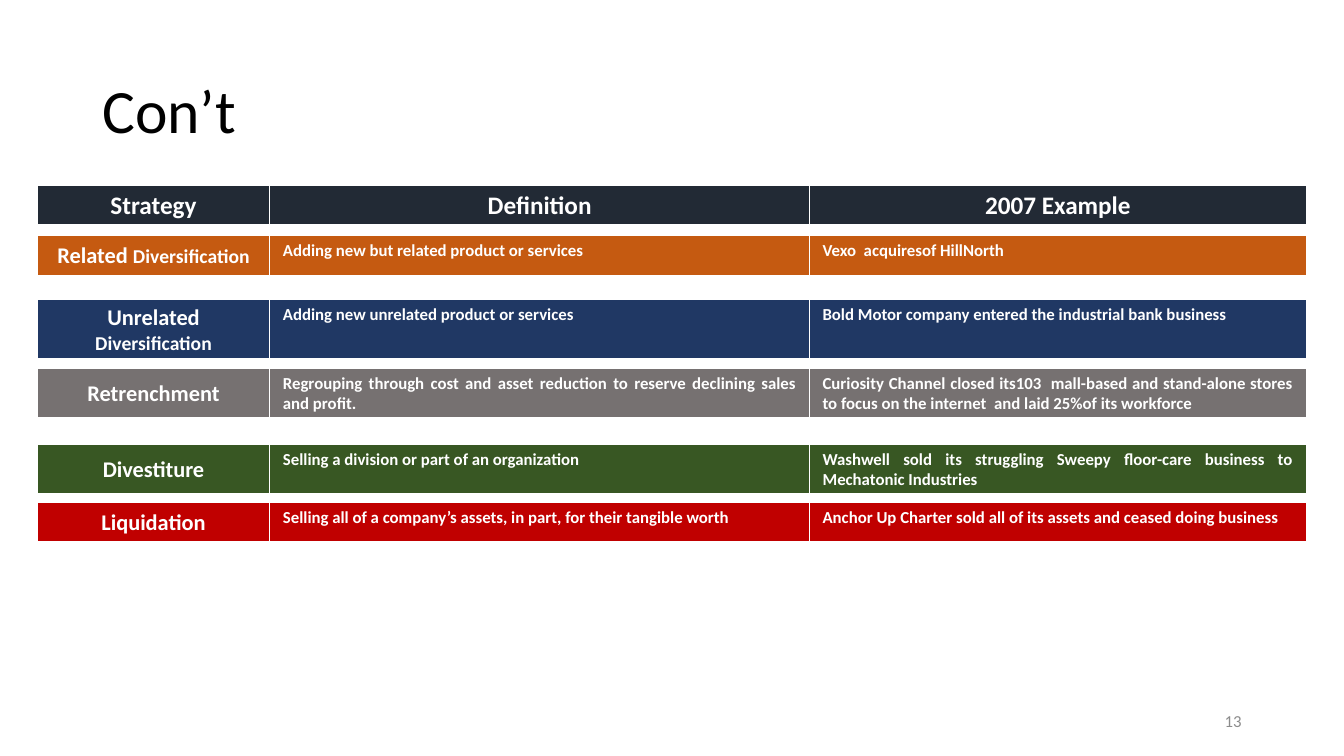
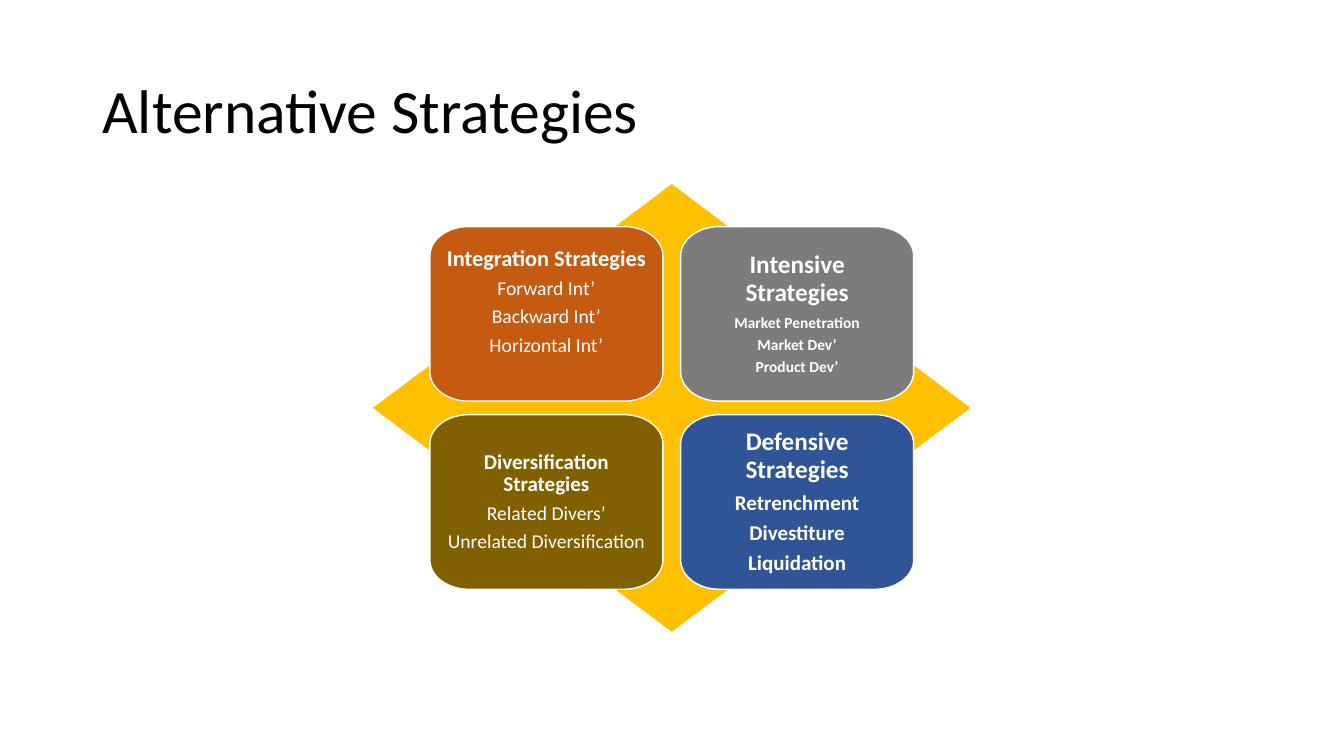
from itertools import pairwise

from lxml.etree import SubElement
from pptx import Presentation
from pptx.dml.color import RGBColor
from pptx.enum.shapes import MSO_SHAPE
from pptx.enum.text import MSO_ANCHOR, PP_ALIGN
from pptx.oxml.ns import qn
from pptx.util import Cm, Pt

FONT = "Calibri"
WHITE = "FFFFFF"
BLACK = "000000"
NUMBER_GREY = "8C8C8C"
GOLD = "FFC000"

COLUMN_WIDTHS = (5.86, 13.6, 12.52)
TABLE_LEFT = 0.94
CELL_FORMAT = {"margin_left": Cm(0.33), "margin_right": Cm(0.33),
               "margin_top": Cm(0.13), "margin_bottom": Cm(0.13)}
BORDERS = {"a:lnL": 1, "a:lnR": 1, "a:lnT": 1, "a:lnB": 3}

# top, height, colour, strategy as (text, size) runs, definition, example
STRATEGIES = [
    (5.93, 1.04, "C55A11", [("Related ", 16), ("Diversification", 14)],
     "Adding new but related product or services",
     "Vexo  acquiresof HillNorth"),
    (7.54, 1.53, "203864", [("Unrelated ", 16), ("Diversification", 14)],
     "Adding new unrelated product or services",
     "Bold Motor company entered the industrial bank business"),
    (9.28, 1.27, "767171", [("Retrenchment", 16)],
     "Regrouping through cost and asset reduction to reserve declining "
     "sales and profit.",
     "Curiosity Channel closed its103  mall-based and stand-alone stores "
     "to focus on the internet  and laid 25%of its workforce"),
    (11.19, 1.27, "385723", [("Divestiture", 16)],
     "Selling a division or part of an organization",
     "Washwell sold its struggling Sweepy floor-care business to "
     "Mechatonic Industries"),
    (12.65, 1.04, "C00000", [("Liquidation", 16)],
     "Selling all of a company’s assets, in part, for their tangible worth",
     "Anchor Up Charter sold all of its assets and ceased doing business"),
]

DIAMOND = (9.4, 4.64, 15.06, 11.28)
CARD_WIDTH, CARD_HEIGHT = 5.87, 4.4
GAP_X, GAP_Y = 0.45, 0.34
ARC_PULL = 0.55

# column, row, colour, heading, heading size, items, item size, bold items,
# inset, extra inset at the bottom
CARDS = [
    (0, 0, "C55A11", "Integration Strategies", 16,
     ["Forward Int’", "Backward Int’", "Horizontal Int’"], 14, False,
     0.38, 0.62),
    (1, 0, "7C7C7C", "Intensive Strategies", 18,
     ["Market Penetration", "Market Dev’", "Product Dev’"], 11, True, 0.4, 0),
    (0, 1, "806000", "Diversification Strategies", 15,
     ["Related Divers’", "Unrelated Diversification"], 14, False, 0.38, 0),
    (1, 1, "2F5597", "Defensive Strategies", 18,
     ["Retrenchment", "Divestiture", "Liquidation"], 15, True, 0.4, 0),
]


def color(value):
    return RGBColor.from_string(value)


def apply_format(target, values):
    for attribute, value in values.items():
        setattr(target, attribute, value)


def add_run(paragraph, text, size, tint=WHITE, bold=False):
    run = paragraph.add_run()
    run.text = text
    apply_format(run.font, {"name": FONT, "size": Pt(size), "bold": bold})
    run.font.color.rgb = color(tint)


def add_label(slide, box, text, size, tint, paragraph_format):
    frame = slide.shapes.add_textbox(*map(Cm, box)).text_frame
    apply_format(frame, {"word_wrap": True,
                         "vertical_anchor": MSO_ANCHOR.MIDDLE})
    paragraph = frame.paragraphs[0]
    apply_format(paragraph, paragraph_format)
    add_run(paragraph, text, size, tint)


def add_titled_slide(deck, title):
    slide = deck.slides.add_slide(deck.slide_layouts[6])
    add_label(slide, (2.33, 1.01, 29.21, 3.68), title, 44, BLACK,
              {"line_spacing": 0.9})
    return slide


def add_page_number(slide, number):
    add_label(slide, (23.92, 17.65, 7.62, 1.01), str(number), 12, NUMBER_GREY,
              {"alignment": PP_ALIGN.RIGHT})


def draw_borders(cell):
    properties = cell._tc.get_or_add_tcPr()
    for tag, width in BORDERS.items():
        border = SubElement(properties, qn(tag), w=str(Pt(width)))
        fill = SubElement(border, qn("a:solidFill"))
        SubElement(fill, qn("a:srgbClr"), val=WHITE)


def fill_cell(cell, runs, fill, alignment, anchor):
    draw_borders(cell)
    apply_format(cell, {**CELL_FORMAT, "vertical_anchor": anchor})
    cell.fill.solid()
    cell.fill.fore_color.rgb = color(fill)
    paragraph = cell.text_frame.paragraphs[0]
    paragraph.alignment = alignment
    for text, size in runs:
        add_run(paragraph, text, size, bold=True)


def add_band(slide, top, height, fill, columns, centred):
    """Add a one-row table; its first `centred` cells are centred."""
    table = slide.shapes.add_table(
        1, len(columns), Cm(TABLE_LEFT), Cm(top),
        Cm(sum(COLUMN_WIDTHS)), Cm(height)).table
    apply_format(table, {"first_row": False, "horz_banding": False})
    for index, (width, runs) in enumerate(zip(COLUMN_WIDTHS, columns)):
        table.columns[index].width = Cm(width)
        if index < centred:
            alignment, anchor = PP_ALIGN.CENTER, MSO_ANCHOR.MIDDLE
        else:
            alignment, anchor = PP_ALIGN.JUSTIFY, MSO_ANCHOR.TOP
        fill_cell(table.cell(0, index), runs, fill, alignment, anchor)


def rounded_outline(left, top, width, height):
    """Return four points a corner: arc start, two controls, arc end."""
    right, bottom = left + width, top + height
    dx, dy = width / 6, height / 6
    corners = [
        ((left, top + dy), (left, top), (left + dx, top)),
        ((right - dx, top), (right, top), (right, top + dy)),
        ((right, bottom - dy), (right, bottom), (right - dx, bottom)),
        ((left + dx, bottom), (left, bottom), (left, bottom - dy)),
    ]
    points = []
    for start, corner, end in corners:
        controls = [tuple(a + ARC_PULL * (b - a) for a, b in zip(base, corner))
                    for base in (start, end)]
        points += [start, *controls, end]
    return [(Cm(x), Cm(y)) for x, y in points]


def bend_corners(shape):
    """Turn the three segments at each corner into one Bézier curve."""
    segments = list(shape._element.iter(qn("a:lnTo")))
    for first in range(0, len(segments), 4):
        corner = segments[first:first + 3]
        curve = corner[0].makeelement(qn("a:cubicBezTo"))
        corner[0].addprevious(curve)
        for segment in corner:
            curve.append(segment[0])
            segment.getparent().remove(segment)


def paint(shape, fill, line=None):
    shape.shadow.inherit = False
    shape.fill.solid()
    shape.fill.fore_color.rgb = color(fill)
    if line:
        shape.line.color.rgb = color(line)
        shape.line.width = Pt(1)
    else:
        shape.line.fill.background()


def add_card(slide, column, row, fill, heading, heading_size, items,
             item_size, bold_items, inset, extra_bottom):
    left, top, width, height = DIAMOND
    first_left = left + width / 2 - GAP_X / 2 - CARD_WIDTH
    first_top = top + height / 2 - GAP_Y / 2 - CARD_HEIGHT
    start, *others = rounded_outline(
        first_left + column * (CARD_WIDTH + GAP_X),
        first_top + row * (CARD_HEIGHT + GAP_Y), CARD_WIDTH, CARD_HEIGHT)
    outline = slide.shapes.build_freeform(*start)
    outline.add_line_segments(others, close=True)
    card = outline.convert_to_shape()
    bend_corners(card)
    paint(card, fill, WHITE)

    frame = card.text_frame
    apply_format(frame, {
        "word_wrap": True, "vertical_anchor": MSO_ANCHOR.MIDDLE,
        "margin_left": Cm(inset), "margin_right": Cm(inset),
        "margin_top": Cm(inset), "margin_bottom": Cm(inset + extra_bottom)})
    lines = [(heading, heading_size, True)]
    lines += [(item, item_size, bold_items) for item in items]
    for index, (text, size, bold) in enumerate(lines):
        paragraph = frame.add_paragraph() if index else frame.paragraphs[0]
        apply_format(paragraph, {
            "alignment": PP_ALIGN.CENTER, "line_spacing": 0.9,
            "space_after": Pt(round(size * 0.35, 1))})
        add_run(paragraph, text, size, bold=bold)


def build_definitions(deck):
    slide = add_titled_slide(deck, "Con’t")
    add_page_number(slide, 13)
    headings = [[(text, 18)]
                for text in ("Strategy", "Definition", "2007 Example")]
    add_band(slide, 4.66, 1.04, "222A35", headings, centred=3)
    for top, height, fill, strategy, definition, example in STRATEGIES:
        columns = [strategy, [(definition, 12)], [(example, 12)]]
        add_band(slide, top, height, fill, columns, centred=1)


def build_overview(deck):
    slide = add_titled_slide(deck, "Alternative Strategies")
    diamond = slide.shapes.add_shape(MSO_SHAPE.DIAMOND, *map(Cm, DIAMOND))
    paint(diamond, GOLD)
    for card in CARDS:
        add_card(slide, *card)


def main():
    deck = Presentation()
    apply_format(deck, {"slide_width": Cm(33.87), "slide_height": Cm(19.05)})
    build_definitions(deck)
    build_overview(deck)
    deck.save("out.pptx")


if __name__ == "__main__":
    main()
